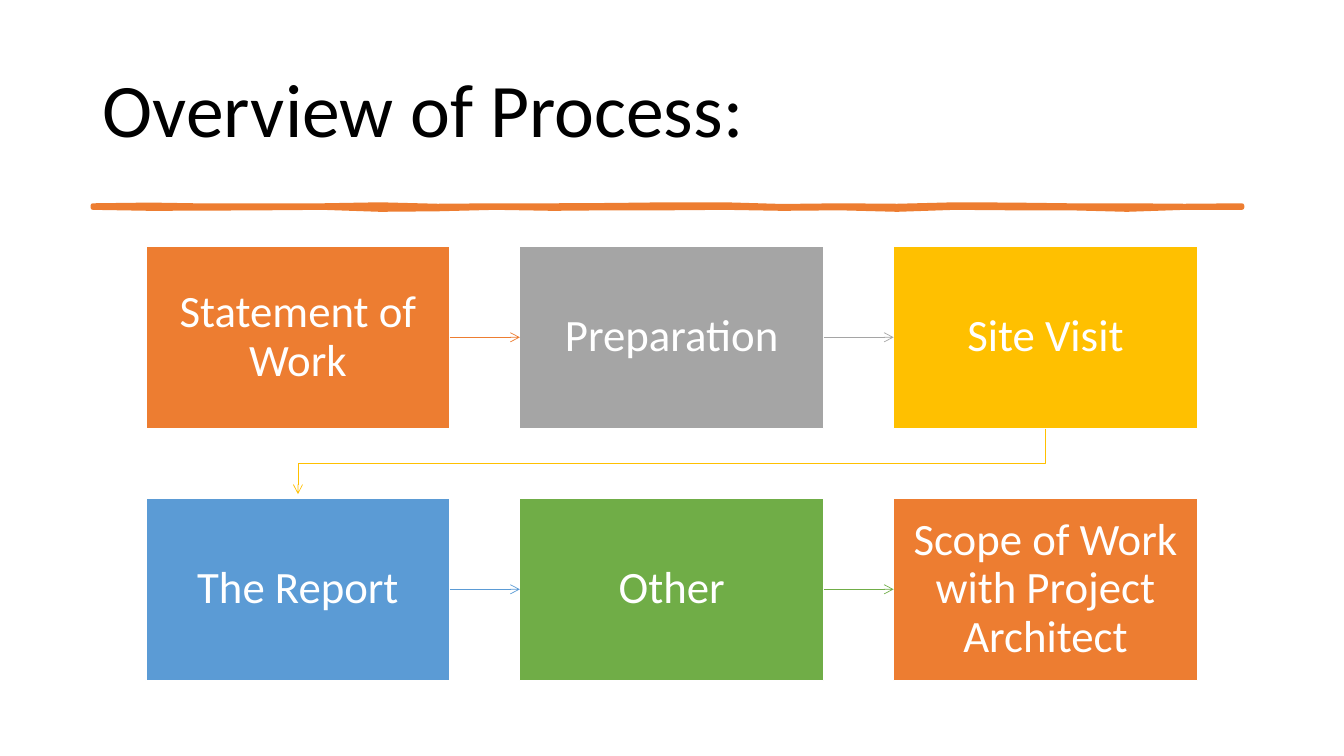
from pptx import Presentation
from pptx.dml.color import RGBColor as RGB
from pptx.enum.shapes import MSO_CONNECTOR as Link, MSO_SHAPE as Kind
from pptx.enum.text import MSO_ANCHOR as Anchor, MSO_AUTO_SIZE as Fit, PP_ALIGN as Align
from pptx.oxml.ns import qn
from pptx.util import Cm, Pt
from lxml.etree import SubElement

COLORS = {
    "orange": "ED7D31", "gray": "A5A5A5", "gold": "FFC000",
    "blue": "5B9BD5", "green": "70AD47", "white": "FFFFFF", "black": "000000",
}
STEPS = [
    ("Statement of Work", "orange"), ("Preparation", "gray"), ("Site Visit", "gold"),
    ("The Report", "blue"), ("Other", "green"),
    ("Scope of Work with Project Architect", "orange"),
]
COLS = 3
LEFT, TOP, WIDE, HIGH = 3.68, 6.2, 7.66, 4.6
STEP_X, STEP_Y = 9.42, 6.35

# Wobble of the brush stroke's edges at even steps, in quarter millimetres
UPPER = [0, -.7, .2, 0, 0, -1, .5, 0, 0, -.3, -1, -1, .7, 0, .5, -1, -.7, 0, 0, .5, 0]
LOWER = [2, 3, 2.8, 2.5, 2, 4, 3.5, 2, 3, 2.5, 2.5, 2, 3, 2.5, 4, 2, 2.5, 2.5, 4, 2, 2]


def color(name):
    return RGB.from_string(COLORS[name])


def style_text(frame, size, hue, align):
    frame.word_wrap = True
    frame.auto_size = Fit.NONE
    frame.vertical_anchor = Anchor.MIDDLE
    para = frame.paragraphs[0]
    para.alignment = align
    para.line_spacing = 0.9
    font = para.runs[0].font
    font.name, font.size = "Calibri", Pt(size)
    font.color.rgb = color(hue)


def style_line(shape, hue, width):
    shape.line.color.rgb = color(hue)
    shape.line.width = Pt(width)


def add_head(shape):
    line = shape.line._get_or_add_ln()
    SubElement(line, qn("a:tailEnd"), type="arrow")


def add_title(slide, text):
    title = slide.shapes.title
    title.left, title.top = Cm(2.34), Cm(1.02)
    title.width, title.height = Cm(29.21), Cm(3.68)
    title.text_frame.text = text
    style_text(title.text_frame, 54, "black", Align.LEFT)


def add_path(slide, points, close):
    spots = [(Cm(x), Cm(y)) for x, y in points]
    pen = slide.shapes.build_freeform(*spots[0])
    pen.add_line_segments(spots[1:], close=close)
    shape = pen.convert_to_shape()
    shape.shadow.inherit = False
    return shape


def add_stroke(slide, left, y, width):
    gap = width / (len(UPPER) - 1)
    upper, lower = (
        [(left + i * gap, y + 0.025 * shift) for i, shift in enumerate(edge)]
        for edge in (UPPER, LOWER)
    )
    stroke = add_path(slide, upper + lower[::-1], True)
    stroke.fill.solid()
    stroke.fill.fore_color.rgb = color("orange")
    style_line(stroke, "orange", 3.25)


def add_box(slide, index, text, hue):
    row, col = divmod(index, COLS)
    box = slide.shapes.add_shape(
        Kind.RECTANGLE, Cm(LEFT + col * STEP_X), Cm(TOP + row * STEP_Y), Cm(WIDE), Cm(HIGH))
    box.shadow.inherit = False
    box.fill.solid()
    box.fill.fore_color.rgb = color(hue)
    style_line(box, "white", 1)
    frame = box.text_frame
    frame.margin_left = frame.margin_right = Cm(0.38)
    frame.margin_top = frame.margin_bottom = Cm(0.41)
    frame.text = text
    style_text(frame, 32, "white", Align.CENTER)
    return box


def add_arrow(slide, start, end, hue):
    arrow = slide.shapes.add_connector(Link.STRAIGHT, 0, 0, 0, 0)
    arrow.begin_connect(start, 3)
    arrow.end_connect(end, 1)
    style_line(arrow, hue, 0.5)
    add_head(arrow)
    SubElement(arrow._element.spPr, qn("a:effectLst"))


def add_turn(slide, hue):
    # Bent arrow from the last box of the top row to the first of the next
    near = LEFT + WIDE / 2
    far = near + (COLS - 1) * STEP_X
    base, end = TOP + HIGH, TOP + STEP_Y
    mid = (base + end) / 2
    turn = add_path(
        slide, [(far, base), (far, mid), (near, mid), (near, end - 0.1)], False)
    turn.fill.background()
    style_line(turn, hue, 0.5)
    add_head(turn)


def main():
    deck = Presentation()
    deck.slide_width, deck.slide_height = Cm(33.87), Cm(19.05)
    slide = deck.slides.add_slide(deck.slide_layouts[5])

    # Heading
    add_title(slide, "Overview of Process:")
    add_stroke(slide, 2.34, 5.18, 28.96)

    # Process steps
    boxes = [add_box(slide, i, text, hue) for i, (text, hue) in enumerate(STEPS)]

    # Arrows, each in the colour of the step it leaves
    for i, (start, end) in enumerate(zip(boxes, boxes[1:])):
        hue = STEPS[i][1]
        if (i + 1) % COLS:
            add_arrow(slide, start, end, hue)
        else:
            add_turn(slide, hue)

    deck.save("out.pptx")


if __name__ == "__main__":
    main()
